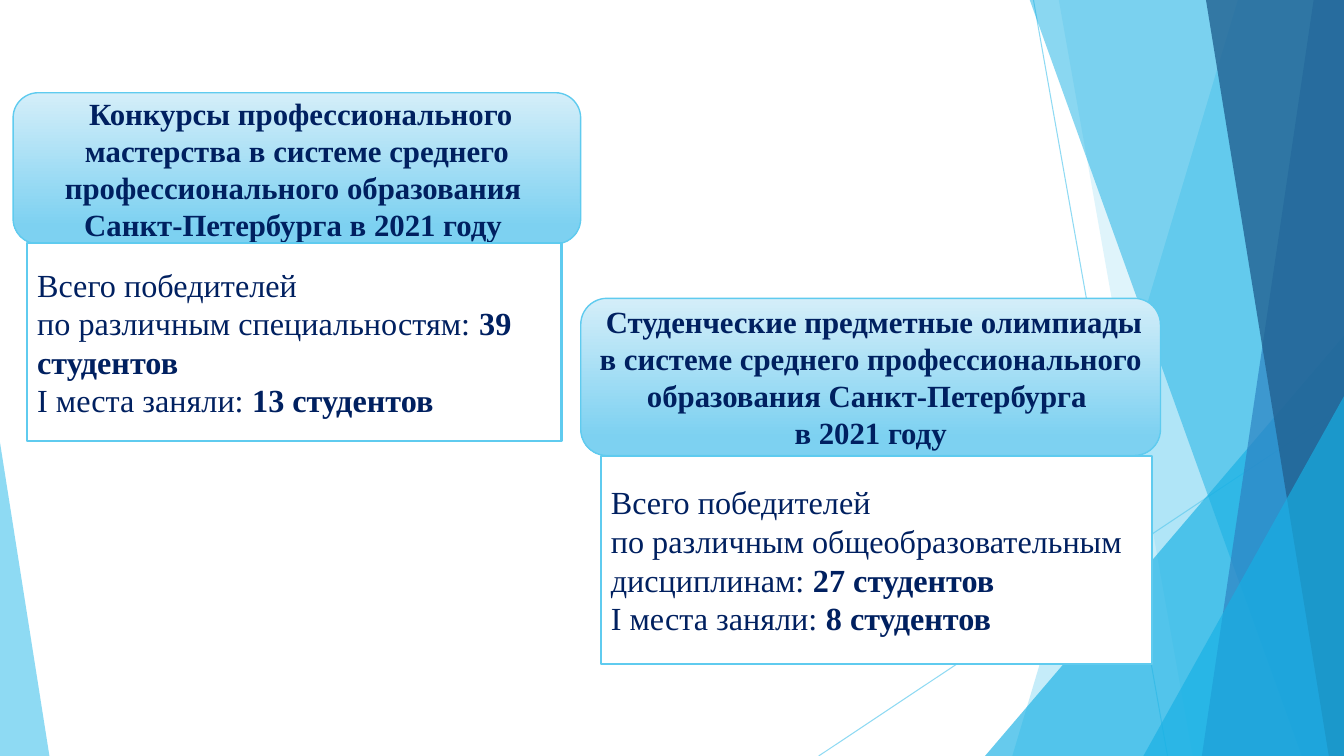
from pptx import Presentation
from pptx.dml.color import RGBColor
from pptx.enum.shapes import MSO_CONNECTOR, MSO_SHAPE
from pptx.enum.text import MSO_ANCHOR, PP_ALIGN
from pptx.oxml.ns import qn
from pptx.util import Inches, Pt
from lxml.etree import SubElement

SKY = RGBColor(0x5F, 0xCB, 0xEF)
CYAN = RGBColor(0x17, 0xB0, 0xE4)
BLUE = RGBColor(0x2E, 0x83, 0xC3)
DEEP = RGBColor(0x22, 0x62, 0x92)
NAVY = RGBColor(0x00, 0x20, 0x60)
WHITE = RGBColor(0xFF, 0xFF, 0xFF)
PALE = RGBColor(0xD4, 0xEE, 0xF9)
LIGHT = RGBColor(0x7D, 0xD1, 0xF1)
FONT = "Times New Roman"
WIDTH, HEIGHT, TOP = 13.33, 7.5, -0.01

# Background, back to front
RAYS = [((10.25, 0), (11.58, HEIGHT)), ((13.33, 4.03), (8.12, HEIGHT))]
# Bands reach the right edge: (top left x, bottom left x), colour, opacity %
# Triangles: (box, apex position), colour, opacity %
BACKDROP = [
    ("band", (12.28, 10.04), SKY, 36),
    ("band", (10.5, 11.83), SKY, 20),
    ("triangle", (9.77, 3.33, 3.56, 4.17, 1), CYAN, 66),
    ("band", (10.21, 12.91), CYAN, 50),
    ("band", (13.03, 11.92), BLUE, 70),
    ("band", (11.96, 13.18), DEEP, 80),
    ("triangle", (11.34, 3.93, 1.99, 3.57, 1), CYAN, 66),
    ("triangle", (0, 4.39, 0.49, 3.11, 0), SKY, 70),
]

# Each paragraph is a list of (text, size, bold) runs
CARDS = [
    {
        "heading_box": (0.13, 0.92, 5.63, 1.5),
        "heading": [
            [(" Конкурсы профессионального мастерства в системе среднего "
              "профессионального образования ", 22, True)],
            [("Санкт-Петербурга в 2021 году ", 22, True)],
        ],
        "body_box": (0.27, 2.41, 5.3, 1.97),
        "body": [
            [("Всего победителей", 23, False)],
            [("по различным специальностям: ", 23, False), ("39 студентов", 23, True)],
            [("I места заняли: ", 23, False), ("13 студентов", 23, True)],
        ],
    },
    {
        "heading_box": (5.76, 2.96, 5.75, 1.56),
        "heading": [
            [(" ", 19, True),
             ("Студенческие предметные олимпиады в системе среднего "
              "профессионального образования Санкт-Петербурга ", 22, True)],
            [("в 2021 году", 22, True)],
        ],
        "body_box": (5.96, 4.52, 5.47, 2.07),
        "body": [
            [("Всего победителей", 23, False)],
            [("по различным общеобразовательным дисциплинам: ", 23, False),
             ("27 студентов", 23, True)],
            [("I места заняли: ", 23, False), ("8 студентов", 23, True)],
        ],
    },
]


def set_opacity(properties, percent):
    """Make the solid colour under the given XML element see-through."""
    color = properties.find(qn("a:solidFill"))[0]
    SubElement(color, qn("a:alpha")).set("val", str(percent * 1000))


def add_ray(slide, start, end):
    ray = slide.shapes.add_connector(
        MSO_CONNECTOR.STRAIGHT, *(Inches(value) for value in start + end))
    ray.line.color.rgb = SKY
    ray.line.width = Pt(0.75)
    properties = ray._element.spPr
    set_opacity(properties.find(qn("a:ln")), 70)
    SubElement(properties, qn("a:effectLst"))


def add_facet(slide, kind, geometry, color, opacity):
    if kind == "band":
        top_x, bottom_x = geometry
        corners = [(top_x, TOP), (WIDTH, TOP), (WIDTH, HEIGHT), (bottom_x, HEIGHT)]
        points = [(Inches(x), Inches(y)) for x, y in corners]
        builder = slide.shapes.build_freeform(*points[0])
        builder.add_line_segments(points[1:], close=True)
        shape = builder.convert_to_shape()
    else:
        *box, apex = geometry
        shape = slide.shapes.add_shape(
            MSO_SHAPE.ISOSCELES_TRIANGLE, *(Inches(value) for value in box))
        shape.adjustments[0] = apex
    shape.shadow.inherit = False
    shape.line.fill.background()
    shape.fill.solid()
    shape.fill.fore_color.rgb = color
    set_opacity(shape._element.spPr, opacity)


def add_panel(slide, preset, box, paragraphs, alignment, line_width):
    shape = slide.shapes.add_shape(preset, *(Inches(value) for value in box))
    shape.shadow.inherit = False
    shape.line.color.rgb = SKY
    shape.line.width = Pt(line_width)
    frame = shape.text_frame
    frame.word_wrap = True
    frame.vertical_anchor = MSO_ANCHOR.MIDDLE
    for index, runs in enumerate(paragraphs):
        paragraph = frame.add_paragraph() if index else frame.paragraphs[0]
        paragraph.alignment = alignment
        for text, size, bold in runs:
            run = paragraph.add_run()
            run.text = text
            run.font.name = FONT
            run.font.size = Pt(size)
            run.font.bold = bold
            run.font.color.rgb = NAVY
    return shape


def add_card(slide, card):
    heading = add_panel(slide, MSO_SHAPE.ROUNDED_RECTANGLE, card["heading_box"],
                        card["heading"], PP_ALIGN.CENTER, 1)
    heading.fill.gradient()
    heading.fill.gradient_angle = 270
    for stop, position, color in zip(heading.fill.gradient_stops, (0, 0.88), (PALE, LIGHT)):
        stop.position = position
        stop.color.rgb = color
    body = add_panel(slide, MSO_SHAPE.RECTANGLE, card["body_box"],
                     card["body"], PP_ALIGN.LEFT, 1.5)
    body.fill.solid()
    body.fill.fore_color.rgb = WHITE


def main():
    presentation = Presentation()
    presentation.slide_width = Inches(WIDTH)
    presentation.slide_height = Inches(HEIGHT)
    slide = presentation.slides.add_slide(presentation.slide_layouts[6])
    for start, end in RAYS:
        add_ray(slide, start, end)
    for facet in BACKDROP:
        add_facet(slide, *facet)
    for card in CARDS:
        add_card(slide, card)
    presentation.save("out.pptx")


if __name__ == "__main__":
    main()
